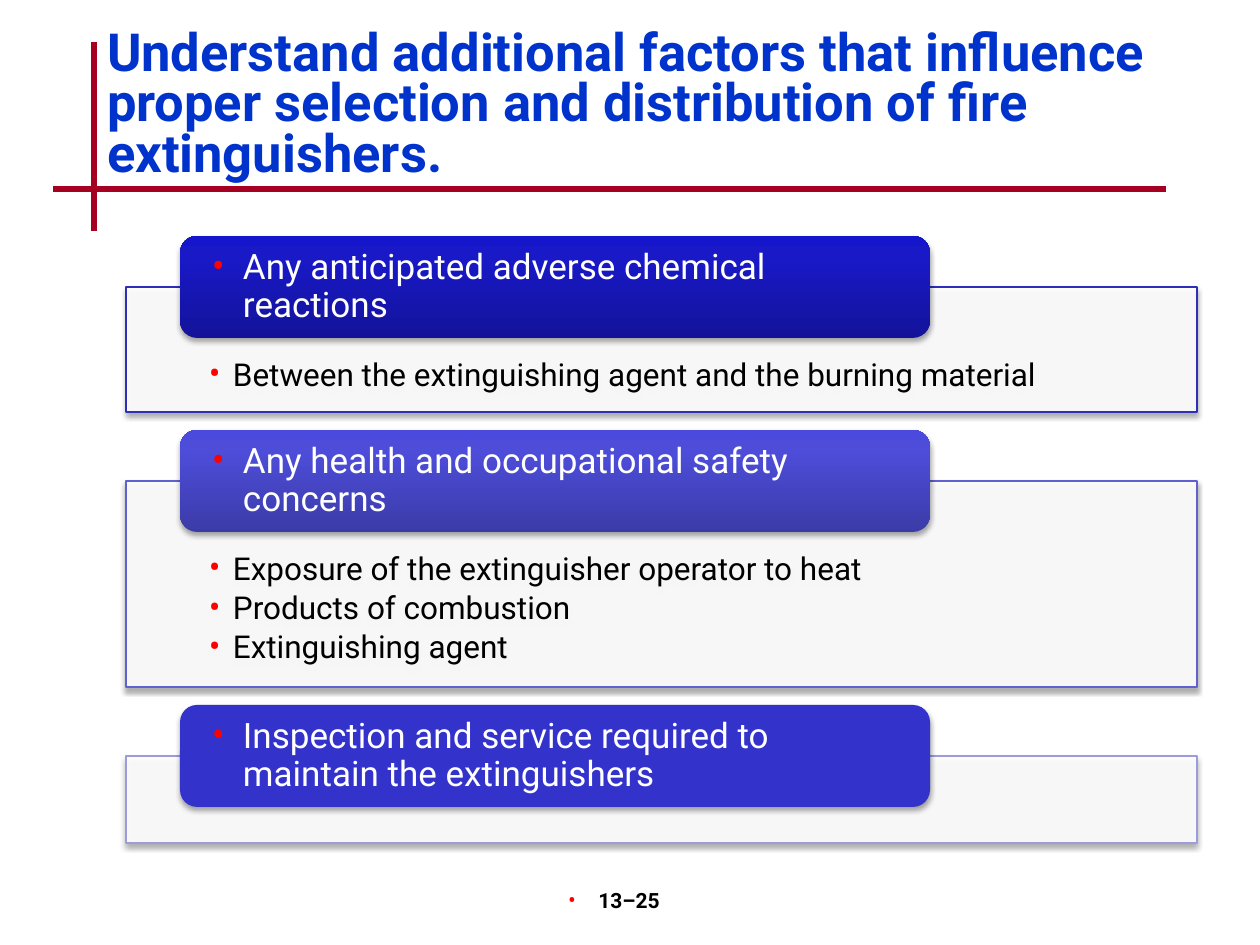
from copy import deepcopy

from lxml import etree
from pptx import Presentation
from pptx.dml.color import RGBColor
from pptx.enum.shapes import MSO_CONNECTOR, MSO_SHAPE
from pptx.enum.text import MSO_ANCHOR, PP_ALIGN
from pptx.oxml import parse_xml
from pptx.oxml.ns import nsdecls, qn
from pptx.util import Inches, Pt

# Content
TITLE = ("Understand additional factors that influence proper selection "
         "and distribution of fire extinguishers.")
PAGE_NUMBER = "13–25"
FACTORS = [
    {"heading": "Any anticipated adverse chemical reactions",
     "details": ["Between the extinguishing agent and the burning material"],
     "height": 125, "border": "2E2EB9",
     "stops": [(0, "13139A"), (0.8, "1919C8"), (1, "1515CC")]},
    {"heading": "Any health and occupational safety concerns",
     "details": ["Exposure of the extinguisher operator to heat",
                 "Products of combustion",
                 "Extinguishing agent"],
     "height": 206, "border": "6060D0",
     "stops": [(0, "3B3BA8"), (0.8, "4D4DDA"), (1, "4A4ADE")]},
    {"heading": "Inspection and service required to maintain the extinguishers",
     "details": [],
     "height": 87, "border": "9C9CDD",
     "stops": [(0, "3333CC")]},
]

THEME = {
    "font": "Roboto",
    "title": "0033CC", "rule": "A50021", "bullet": "FF0000",
    "panel": "FFFFFF", "heading": "FFFFFF", "detail": "000000",
    "title_size": 30, "heading_size": 20, "detail_size": 18, "page_size": 12,
}

# Layout in px
SLIDE_SIZE = (1260, 945)
RULES = [(94, 42, 94, 231), (53, 189, 1166, 189)]
TITLE_BOX = (94, 25, 1092, 126)
PAGE_BOX = (483, 882, 262, 63)
PANEL_LEFT, PANEL_WIDTH, FIRST_PANEL_TOP = 126, 1071, 287
HEADING_LEFT, HEADING_WIDTH, HEADING_HEIGHT = 180, 750, 102
OVERLAP = HEADING_HEIGHT // 2
FACTOR_GAP = 18


def px(length):
    return round(length * Inches(1) / 126)


def rgb(name):
    return RGBColor.from_string(THEME.get(name, name))


def add_bullet(paragraph, indent):
    properties = paragraph._p.get_or_add_pPr()
    properties.set("marL", str(px(indent)))
    properties.set("indent", str(-px(indent)))
    for xml in (f'<a:buClr {nsdecls("a")}><a:srgbClr val="{THEME["bullet"]}"/></a:buClr>',
                f'<a:buSzPct {nsdecls("a")} val="110000"/>',
                f'<a:buFont {nsdecls("a")} typeface="{THEME["font"]}"/>',
                f'<a:buChar {nsdecls("a")} char="•"/>'):
        properties.append(parse_xml(xml))


def style(paragraph, role, color, bold=False, spacing=None):
    paragraph.line_spacing = spacing
    font = paragraph.font
    font.name, font.size, font.bold = THEME["font"], Pt(THEME[role + "_size"]), bold
    font.color.rgb = rgb(color)


def set_frame(frame, anchor, left=0, top=0, right=0, bottom=0):
    frame.word_wrap = True
    frame.vertical_anchor = anchor
    frame.margin_left, frame.margin_top = px(left), px(top)
    frame.margin_right, frame.margin_bottom = px(right), px(bottom)


def add_block(slide, preset, box):
    block = slide.shapes.add_shape(preset, *map(px, box))
    block.shadow.inherit = False
    effects = block._element.spPr.find(qn("a:effectLst"))
    effects.append(parse_xml(
        f'<a:outerShdw {nsdecls("a")} blurRad="{Pt(3.1)}" dist="{Pt(1.8)}" '
        'dir="5400000" rotWithShape="0"><a:srgbClr val="000000">'
        '<a:alpha val="35000"/></a:srgbClr></a:outerShdw>'))
    return block


def fill_heading(fill, stops):
    if len(stops) == 1:
        fill.solid()
        fill.fore_color.rgb = rgb(stops[0][1])
        return
    fill.gradient()
    fill.gradient_angle = 90
    first = fill.gradient_stops[0]._gs
    first.addnext(deepcopy(first))
    for stop, (position, color) in zip(fill.gradient_stops, stops):
        stop.position = position
        stop.color.rgb = rgb(color)


def add_panel(slide, factor, top):
    panel = add_block(slide, MSO_SHAPE.RECTANGLE,
                      (PANEL_LEFT, top, PANEL_WIDTH, factor["height"]))
    panel.fill.solid()
    panel.fill.fore_color.rgb = rgb("panel")
    color = panel._element.spPr.find(qn("a:solidFill"))[0]
    etree.SubElement(color, qn("a:alpha"), val="90000")
    panel.line.color.rgb = rgb(factor["border"])
    panel.line.width = Pt(0.75)
    frame = panel.text_frame
    set_frame(frame, MSO_ANCHOR.TOP, 83, 72, 83, 18)
    for i, detail in enumerate(factor["details"]):
        paragraph = frame.add_paragraph() if i else frame.paragraphs[0]
        paragraph.text = detail
        paragraph.level = 1
        paragraph.alignment = PP_ALIGN.LEFT
        paragraph.space_after = Pt(3)
        add_bullet(paragraph, 24)
        style(paragraph, "detail", "detail", spacing=0.9)


def add_heading(slide, factor, top):
    heading = add_block(slide, MSO_SHAPE.ROUNDED_RECTANGLE,
                        (HEADING_LEFT, top, HEADING_WIDTH, HEADING_HEIGHT))
    fill_heading(heading.fill, factor["stops"])
    heading.line.fill.background()
    set_frame(heading.text_frame, MSO_ANCHOR.MIDDLE, left=27, right=27)
    paragraph = heading.text_frame.paragraphs[0]
    paragraph.text = factor["heading"]
    paragraph.alignment = PP_ALIGN.LEFT
    add_bullet(paragraph, 31)
    style(paragraph, "heading", "heading", spacing=0.9)


def main():
    deck = Presentation()
    deck.slide_width, deck.slide_height = map(px, SLIDE_SIZE)
    slide = deck.slides.add_slide(deck.slide_layouts[5])

    # Crossing rules
    for ends in RULES:
        rule = slide.shapes.add_connector(MSO_CONNECTOR.STRAIGHT, *map(px, ends))
        rule.line.color.rgb = rgb("rule")
        rule.line.width = Pt(3)
        etree.SubElement(rule._element.spPr, qn("a:effectLst"))

    # Title
    title = slide.shapes.title
    title.left, title.top, title.width, title.height = map(px, TITLE_BOX)
    set_frame(title.text_frame, MSO_ANCHOR.TOP, 13, 6, 13, 6)
    title.text_frame.text = TITLE
    title.text_frame.paragraphs[0].alignment = PP_ALIGN.LEFT
    style(title.text_frame.paragraphs[0], "title", "title", bold=True, spacing=0.8)

    # Factors, each a panel with its heading across the top edge
    top = FIRST_PANEL_TOP
    for factor in FACTORS:
        add_panel(slide, factor, top)
        add_heading(slide, factor, top - OVERLAP)
        top += factor["height"] + FACTOR_GAP + OVERLAP

    # Page number
    page = slide.shapes.add_textbox(*map(px, PAGE_BOX)).text_frame
    set_frame(page, MSO_ANCHOR.TOP, 13, 6, 13, 6)
    page.text = PAGE_NUMBER
    page.paragraphs[0].alignment = PP_ALIGN.CENTER
    add_bullet(page.paragraphs[0], 30)
    style(page.paragraphs[0], "page", "detail", bold=True)

    deck.save("out.pptx")


if __name__ == "__main__":
    main()
